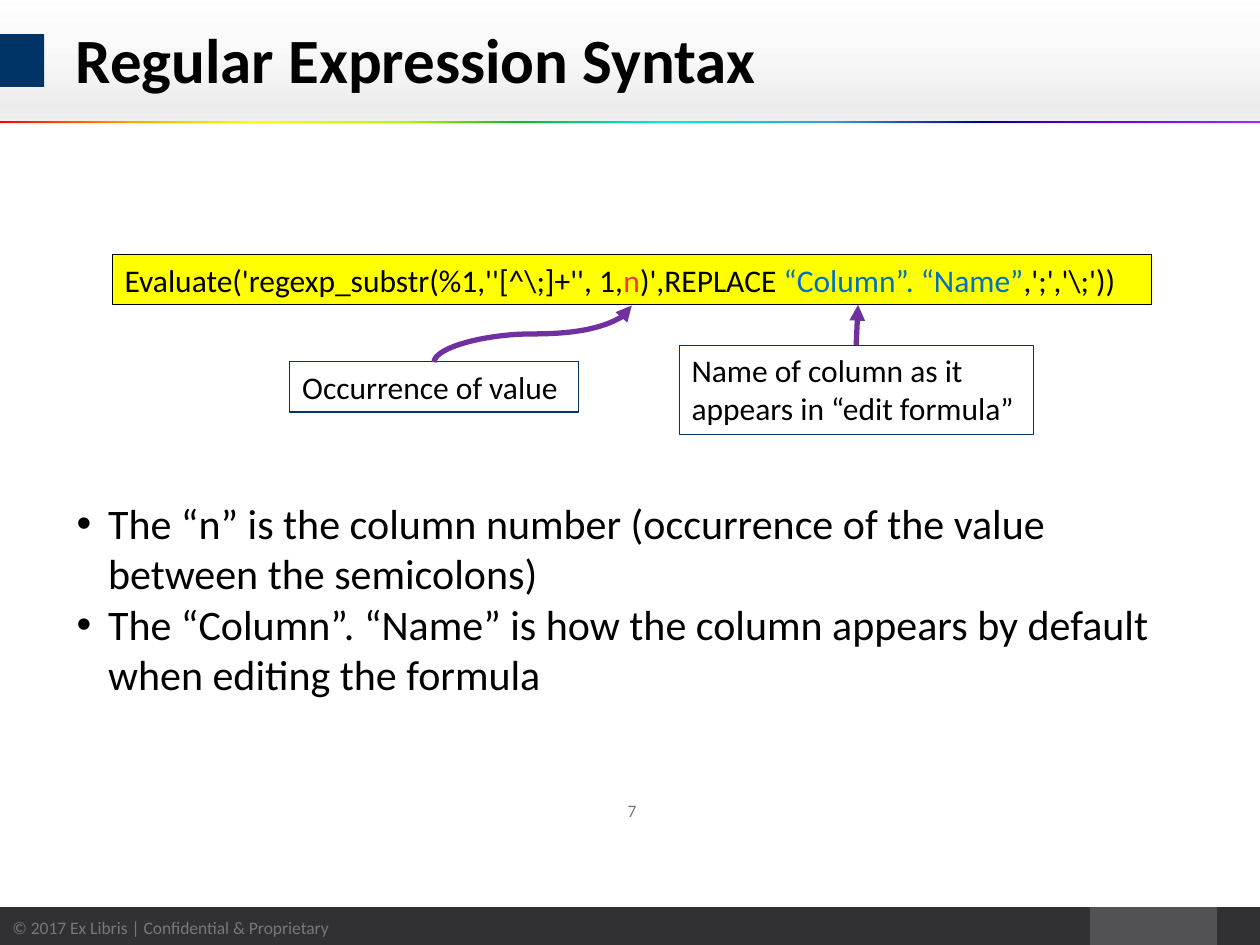
from dataclasses import dataclass

from lxml import etree
from pptx import Presentation
from pptx.dml.color import RGBColor as RGB
from pptx.enum.shapes import MSO_CONNECTOR as Line, MSO_SHAPE as Kind
from pptx.enum.text import MSO_ANCHOR as Anchor, PP_ALIGN as Align
from pptx.oxml.ns import qn
from pptx.util import Inches, Pt


@dataclass(frozen=True)
class Theme:
    face: str = "Calibri"
    ink: str = "000000"
    navy: str = "003466"
    dark: str = "313133"
    slate: str = "525254"
    mute: str = "787878"
    gold: str = "FFFF00"
    red: str = "EE3A43"
    blue: str = "0070C0"
    plum: str = "7030A0"
    head: int = 36
    body: int = 24
    code: int = 18
    note: int = 10


T = Theme()
SHEEN = [(0, "FAFAFA", 12), (66, "D7D7D7", 30), (83, "D7D7D7", 47),
         (100, "E4E4E4", 54)]
BANDS = [(0, "A22DE8", 100), (12, "7200D1", 100), (22, "000086", 100),
         (34, "399CDB", 100), (47, "00E9E8", 100), (59, "11B920", 100),
         (68, "B1F900", 100), (80, "FFFF00", 100), (89, "FFAB00", 100),
         (100, "FF0000", 100)]


def style(font, size, color=T.ink, bold=False):
    font.name, font.size, font.bold = T.face, Pt(size), bold
    font.color.rgb = RGB.from_string(color)


def rect(slide, x, y, w, h, fill=None, edge=None):
    box = slide.shapes.add_shape(
        Kind.RECTANGLE, Inches(x), Inches(y), Inches(w), Inches(h))
    box.shadow.inherit = False
    if fill:
        box.fill.solid()
        box.fill.fore_color.rgb = RGB.from_string(fill)
    else:
        box.fill.background()
    if edge:
        box.line.color.rgb = RGB.from_string(edge)
        box.line.width = Pt(0.75)
    else:
        box.line.fill.background()
    return box


def blend(box, stops, angle):
    box.fill.gradient()
    box.fill.gradient_angle = 0
    grad = box._element.spPr.find(qn("a:gradFill"))
    grad.find(qn("a:lin")).set("ang", str(angle * 60000))
    group = grad.find(qn("a:gsLst"))
    for old in list(group):
        group.remove(old)
    for pos, color, alpha in stops:
        stop = etree.SubElement(group, qn("a:gs"), pos=str(pos * 1000))
        tone = etree.SubElement(stop, qn("a:srgbClr"), val=color)
        if alpha < 100:
            etree.SubElement(tone, qn("a:alpha"), val=str(alpha * 1000))


def write(box, text, size, color=T.ink, align=Align.LEFT, anchor=Anchor.TOP):
    frame = box.text_frame
    frame.word_wrap = True
    frame.vertical_anchor = anchor
    para = frame.paragraphs[0]
    para.text, para.alignment = text, align
    style(para.font, size, color)


def arrow(line):
    line.line.color.rgb = RGB.from_string(T.plum)
    line.line.width = Pt(3)
    etree.SubElement(line.line._get_or_add_ln(), qn("a:tailEnd"), type="triangle")
    etree.SubElement(line._element.spPr, qn("a:effectLst"))


def footer(slide, x, y, w, h):
    bar = rect(slide, x, y, w - 1.35, h, T.dark)
    write(bar, "© 2017 Ex Libris | Confidential & Proprietary",
          T.note, T.mute, anchor=Anchor.MIDDLE)
    rect(slide, x + w - 1.35, y, 1.01, h, T.slate)
    rect(slide, x + w - 0.34, y, 0.34, h, T.dark)


def header(slide, x, y, w, h):
    blend(rect(slide, x, y + 0.02, w, h - 0.02), SHEEN, 90)
    rect(slide, x, y + 0.27, 0.35, 0.42, T.navy)
    blend(rect(slide, x, y + h - 0.02, w, 0.02), BANDS, 180)
    title = slide.shapes.title
    title.left, title.top = Inches(x + 0.5), Inches(y + 0.08)
    title.width, title.height = Inches(w - 0.93), Inches(0.84)
    write(title, "Regular Expression Syntax", T.head, anchor=Anchor.MIDDLE)
    para = title.text_frame.paragraphs[0]
    para.font.bold, para.line_spacing = True, 0.9
    slide.shapes._spTree.append(title._element)


def formula(slide, x, y, w, h):
    code = rect(slide, x, y, w, 0.4, T.gold, T.ink)
    code.text_frame.word_wrap = True
    para = code.text_frame.paragraphs[0]
    para.alignment = Align.LEFT
    code.text_frame.vertical_anchor = Anchor.TOP
    for text, color in [("Evaluate('regexp_substr(%1,''[^\\;]+'', 1,", T.ink),
                        ("n", T.red), (")',REPLACE ", T.ink),
                        ("“Column”. “Name”", T.blue), (",';','\\;'))", T.ink)]:
        run = para.add_run()
        run.text = text
        style(run.font, T.code, color)

    count = rect(slide, x + 1.41, y + 0.85, 2.29, 0.4, edge=T.navy)
    write(count, "Occurrence of value", T.code)
    name = rect(slide, x + 4.5, y + h - 0.71, 2.81, 0.71, edge=T.navy)
    write(name, "Name of column as it appears in “edit formula”", T.code)

    midx, midy, rise, run = x + 3.34, y + 0.63, 0.45, 1.57
    curve = slide.shapes.add_connector(
        Line.CURVE, Inches(midx + rise / 2), Inches(midy + run / 2),
        Inches(midx - rise / 2), Inches(midy - run / 2))
    curve._element.spPr.find(qn("a:xfrm")).set("rot", str(90 * 60000))
    arrow(curve)
    link = slide.shapes.add_connector(
        Line.STRAIGHT, Inches(x + 5.91), Inches(y + 0.72),
        Inches(x + 5.92), Inches(y + 0.4))
    link.begin_connect(name, 0)
    arrow(link)


def points(slide, x, y, w, h):
    box = slide.shapes.add_textbox(Inches(x), Inches(y), Inches(w), Inches(h))
    frame = box.text_frame
    frame.word_wrap = True
    frame.text = "\n".join([
        "The “n” is the column number (occurrence of the value between the semicolons)",
        "The “Column”. “Name” is how the column appears by default when editing the formula"])
    for para in frame.paragraphs:
        props = para._p.get_or_add_pPr()
        props.set("marL", str(Inches(0.25)))
        props.set("indent", str(-Inches(0.25)))
        etree.SubElement(props, qn("a:buFont"), typeface="Arial")
        etree.SubElement(props, qn("a:buChar"), char="•")
        style(para.font, T.body)


def number(slide, x, y, w, h):
    box = slide.shapes.add_textbox(Inches(x), Inches(y), Inches(w), Inches(h))
    write(box, "7", T.note, T.mute, Align.CENTER, Anchor.MIDDLE)


def main():
    deck = Presentation()
    deck.slide_width, deck.slide_height = Inches(10), Inches(7.5)
    slide = deck.slides.add_slide(deck.slide_layouts[5])
    footer(slide, 0, 7.2, 10, 0.32)
    header(slide, 0, 0, 10, 0.98)
    number(slide, 4.72, 6.23, 0.59, 0.4)
    points(slide, 0.51, 3.9, 9, 2.36)
    formula(slide, 0.89, 2.02, 8.25, 1.43)
    deck.save("out.pptx")


if __name__ == "__main__":
    main()
